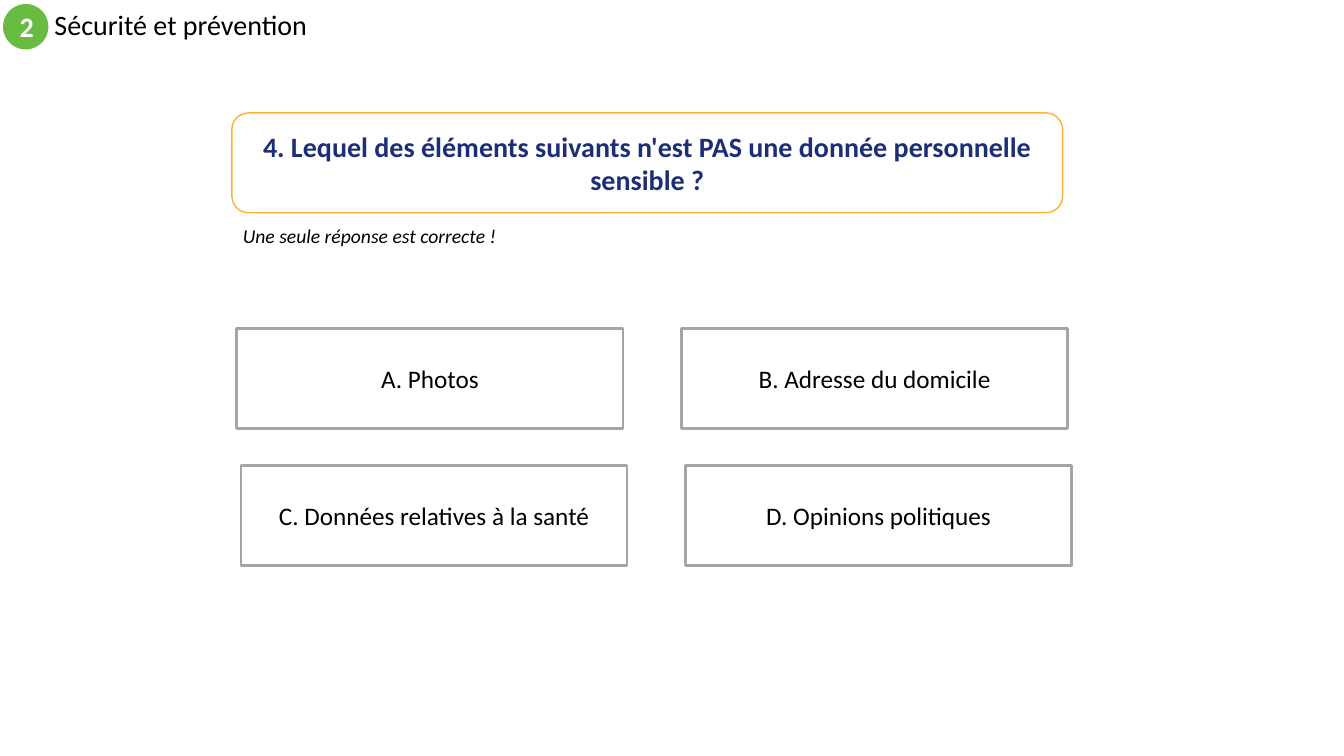
from pptx import Presentation
from pptx.dml.color import RGBColor
from pptx.enum import shapes, text
from pptx.util import Inches, Pt

GREEN = RGBColor(0x68, 0xBC, 0x42)
ORANGE = RGBColor(0xFC, 0xB1, 0x3A)
NAVY = RGBColor(0x1C, 0x2E, 0x78)
GREY = RGBColor(0xA5, 0xA5, 0xA5)
BLACK = RGBColor(0, 0, 0)
WHITE = RGBColor(0xFF, 0xFF, 0xFF)
CENTER = text.PP_ALIGN.CENTER
LEFT = text.PP_ALIGN.LEFT


def write(holder, wording, size, color, align=CENTER, bold=False, italic=False,
          anchor=text.MSO_ANCHOR.MIDDLE):
    frame = holder.text_frame
    frame.word_wrap = True
    frame.vertical_anchor = anchor
    paragraph = frame.paragraphs[0]
    paragraph.alignment = align
    run = paragraph.add_run()
    run.text = wording
    run.font.name = "Calibri"
    run.font.size = Pt(size)
    run.font.color.rgb = color
    run.font.bold = bold
    run.font.italic = italic


def add_box(kind, left, top, width, height, fill, line=None, weight=1):
    box = slide.shapes.add_shape(kind, Inches(left), Inches(top), Inches(width), Inches(height))
    box.shadow.inherit = False
    box.fill.solid()
    box.fill.fore_color.rgb = fill
    if line is None:
        box.line.fill.background()
    else:
        box.line.color.rgb = line
        box.line.width = Pt(weight)
    return box


prs = Presentation()
prs.slide_width = Inches(13.33)
prs.slide_height = Inches(7.5)
slide = prs.slides.add_slide(prs.slide_layouts[5])

# Section heading
section_title = slide.shapes.title
section_title.left, section_title.top = Inches(0.44), Inches(0.04)
section_title.width, section_title.height = Inches(8), Inches(0.45)
section_title.text_frame.auto_size = text.MSO_AUTO_SIZE.NONE
write(section_title, "Sécurité et prévention", 20, BLACK, LEFT)
section_title.text_frame.paragraphs[0].line_spacing = 0.9

section_number = add_box(shapes.MSO_SHAPE.OVAL, 0.03, 0.04, 0.45, 0.45, GREEN)
write(section_number, "2", 20, WHITE, bold=True)

# Question and instruction
question = add_box(shapes.MSO_SHAPE.ROUNDED_RECTANGLE, 2.3, 1.12, 8.24, 0.99, WHITE, ORANGE)
write(question, "4. Lequel des éléments suivants n'est PAS une donnée personnelle sensible ?",
      20, NAVY, bold=True)

instruction = slide.shapes.add_textbox(Inches(2.31), Inches(2.17), Inches(3.61), Inches(0.34))
write(instruction, "Une seule réponse est correcte !", 14, BLACK, LEFT, italic=True,
      anchor=text.MSO_ANCHOR.TOP)
instruction.text_frame.auto_size = text.MSO_AUTO_SIZE.SHAPE_TO_FIT_TEXT

# Answers in two columns; the second row is set slightly to the right
answers = ["A. Photos", "B. Adresse du domicile",
           "C. Données relatives à la santé", "D. Opinions politiques"]
for index, wording in enumerate(answers):
    row, column = divmod(index, 2)
    answer = add_box(shapes.MSO_SHAPE.RECTANGLE, 2.35 + 4.41 * column + 0.04 * row,
                     3.26 + 1.36 * row, 3.83, 0.99, WHITE, GREY, 2)
    write(answer, wording, 18, BLACK)

prs.save("out.pptx")
